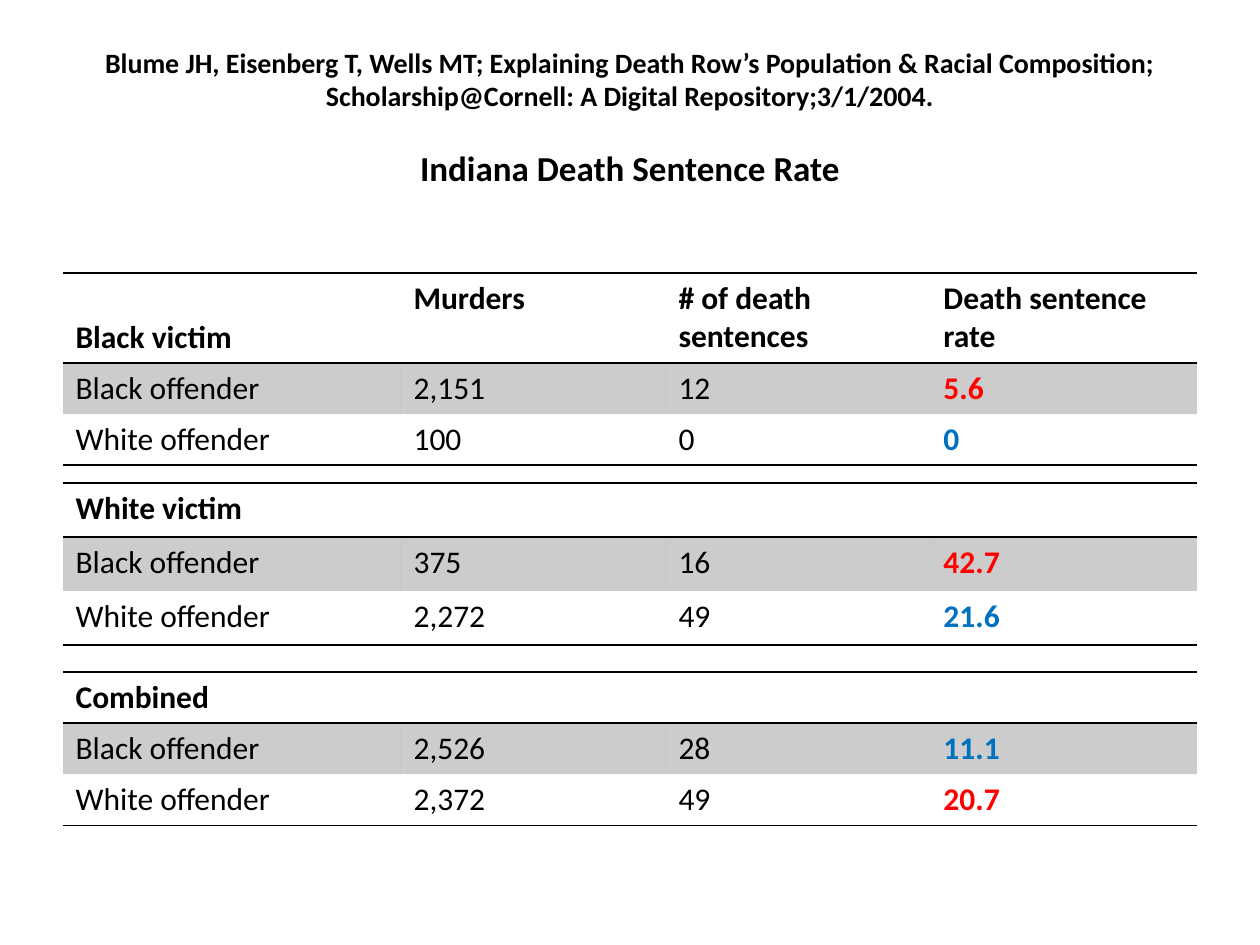
from lxml import etree
from pptx import Presentation
from pptx import util as u
from pptx.dml.color import RGBColor
from pptx.enum import text
from pptx.oxml import ns

SCALE = 914400 // 126
FONT = "Calibri"
BLACK, RED, BLUE = "000000", "FF0000", "0070C0"
NO_STYLE = "{2D5ABB26-0587-4C30-8999-92F81FD0307C}"
COLUMNS = [338, 265, 265, 266]
LEFT = 63


def px(length):
    return u.Emu(length * SCALE)


def color(value):
    return RGBColor.from_string(value)


def write(para, words, size=18, bold=False, fill=BLACK, align=None, before=0):
    para.alignment = align
    if before:
        para.space_before = u.Pt(before)
    span = para.add_run()
    span.text = words
    span.font.name = FONT
    span.font.size = u.Pt(size)
    span.font.bold = bold
    span.font.color.rgb = color(fill)


def shade(cell, fill, percent):
    cell.fill.solid()
    cell.fill.fore_color.rgb = color(fill)
    tone = cell._tc.tcPr.find(".//" + ns.qn("a:srgbClr"))
    etree.SubElement(tone, ns.qn("a:alpha"), val=str(percent * 1000))


def rule(cell, sides):
    """Draw 1 pt rules on the given sides, in schema order ahead of the fill."""
    properties = cell._tc.get_or_add_tcPr()
    for place, side in enumerate(sides):
        line = etree.Element(ns.qn("a:ln" + side), w=str(u.Pt(1)))
        solid = etree.SubElement(line, ns.qn("a:solidFill"))
        etree.SubElement(solid, ns.qn("a:srgbClr"), val=BLACK)
        properties.insert(place, line)


def add_heading(page, left, top, width, height):
    title = page.shapes.title
    title.left, title.top, title.width, title.height = map(px, (left, top, width, height))
    box = title.text_frame
    box.word_wrap = True
    box.auto_size = text.MSO_AUTO_SIZE.NONE
    box.vertical_anchor = text.MSO_ANCHOR.MIDDLE
    lines = [
        ("Blume JH, Eisenberg T, Wells MT; Explaining Death Row’s Population & Racial Composition;", 16, 0),
        ("Scholarship@Cornell: A Digital Repository;3/1/2004.", 16, 0),
        ("Indiana Death Sentence Rate", 20, 19.5),
    ]
    for index, (words, size, before) in enumerate(lines):
        para = box.add_paragraph() if index else box.paragraphs[0]
        write(para, words, size=size, bold=True, before=before, align=text.PP_ALIGN.CENTER)


def add_rates(page, top, heights, header, offenders, rate_colors):
    rows = [header, *offenders]
    table = page.shapes.add_table(len(rows), len(COLUMNS), px(LEFT), px(top),
                                  px(sum(COLUMNS)), px(sum(heights))).table
    table._tbl.tblPr.find(ns.qn("a:tableStyleId")).text = NO_STYLE
    table.horz_banding = False
    for column, width in zip(table.columns, COLUMNS):
        column.width = px(width)
    for r, (row, height) in enumerate(zip(rows, heights)):
        table.rows[r].height = px(height)
        for c, words in enumerate(row):
            cell = table.cell(r, c)
            is_rate = r > 0 and c == len(COLUMNS) - 1
            if words:
                write(cell.text_frame.paragraphs[0], words, bold=r == 0 or is_rate,
                      fill=rate_colors[r - 1] if is_rate else BLACK)
            if r == 1:
                shade(cell, BLACK, 20)
            else:
                rule(cell, "TB" if r == 0 else "B")
    # The group name sits on the last line of the header row
    table.cell(0, 0).vertical_anchor = (
        text.MSO_ANCHOR.BOTTOM if header[1] else text.MSO_ANCHOR.TOP)


def main():
    deck = Presentation()
    deck.slide_width, deck.slide_height = u.Inches(10), u.Inches(7.5)
    page = deck.slides.add_slide(deck.slide_layouts[5])

    add_heading(page, LEFT, 38, sum(COLUMNS), 158)

    # One table for each group of victims
    add_rates(page, 273, [90, 51, 51],
              ["Black victim", "Murders", "# of death sentences", "Death sentence rate"],
              [["Black offender", "2,151", "12", "5.6"],
               ["White offender", "100", "0", "0"]], [RED, BLUE])
    add_rates(page, 483, [54] * 3, ["White victim", "", "", ""],
              [["Black offender", "375", "16", "42.7"],
               ["White offender", "2,272", "49", "21.6"]], [RED, BLUE])
    add_rates(page, 672, [51] * 3, ["Combined", "", "", ""],
              [["Black offender", "2,526", "28", "11.1"],
               ["White offender", "2,372", "49", "20.7"]], [BLUE, RED])

    deck.save("out.pptx")


if __name__ == "__main__":
    main()
